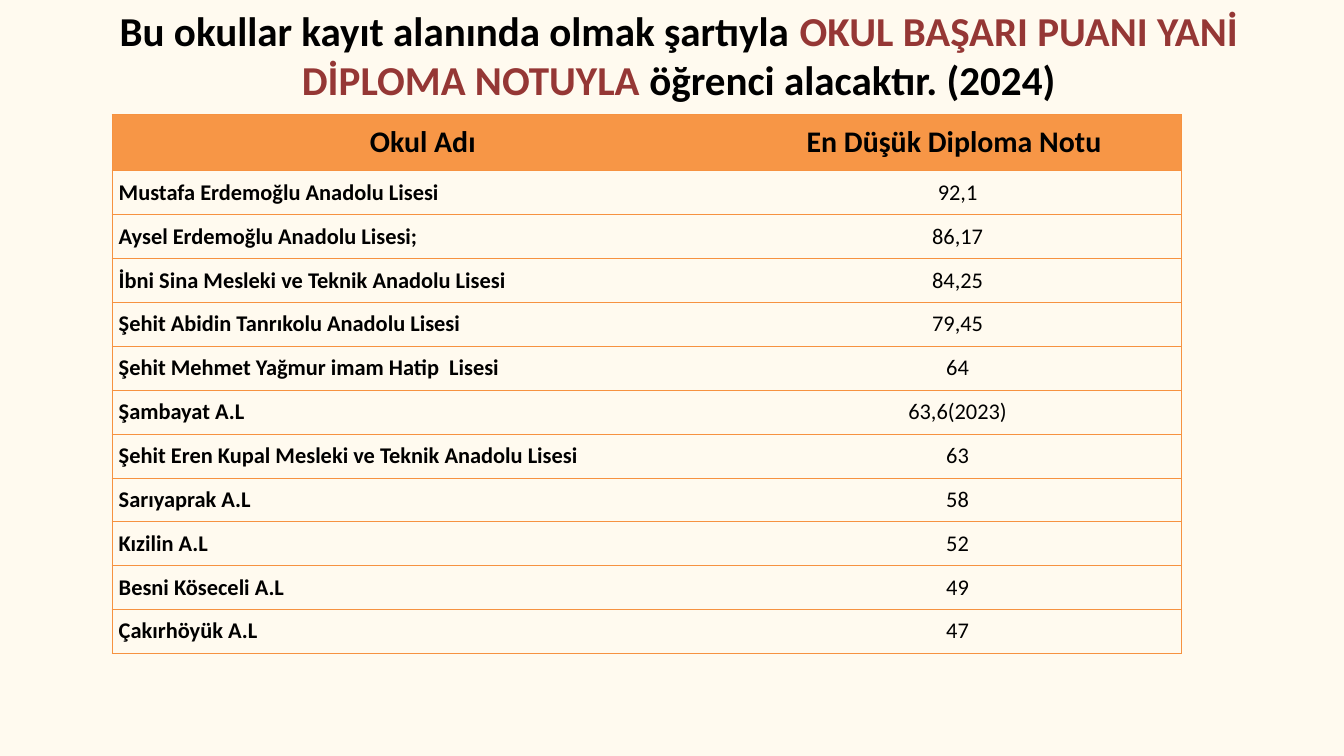
from typing import NamedTuple

from pptx import Presentation
from pptx.dml.color import RGBColor
from pptx.enum.text import MSO_ANCHOR as Anchor, MSO_AUTO_SIZE as AutoSize, PP_ALIGN as Align
from pptx.oxml import parse_xml
from pptx.oxml.ns import nsdecls
from pptx.util import Emu, Pt

PX = 6350  # 144 px to the inch
COLORS = {"page": "FFFAEF", "header": "F79646", "border": "F69240",
          "text": "000000", "accent": "953735"}
TITLE_BOX = {"left": 135, "top": 4, "width": 2640, "height": 228}
COLUMN_WIDTHS = (1332, 960)
HEADER_HEIGHT, ROW_HEIGHT = 120, 94
TABLE_LEFT, TABLE_TOP = 240, 246


class School(NamedTuple):
    name: str
    lowest_grade: str


class Style(NamedTuple):
    size: int
    bold: bool
    align: Align
    color: str = "text"


TITLE_SPANS = (
    ("Bu okullar kayıt alanında olmak şartıyla ", "text"),
    ("OKUL BAŞARI PUANI YANİ DİPLOMA NOTUYLA", "accent"),
    (" öğrenci alacaktır. (2024)", "text"),
)
HEADER = School("Okul Adı", "En Düşük Diploma Notu ")
SCHOOLS = (
    School("Mustafa Erdemoğlu Anadolu Lisesi", "92,1"),
    School("Aysel Erdemoğlu Anadolu Lisesi;", "86,17"),
    School("İbni Sina Mesleki ve Teknik Anadolu Lisesi", "84,25"),
    School("Şehit Abidin Tanrıkolu Anadolu Lisesi", "79,45"),
    School("Şehit Mehmet Yağmur imam Hatip  Lisesi", "64"),
    School("Şambayat A.L", "63,6(2023)"),
    School("Şehit Eren Kupal Mesleki ve Teknik Anadolu Lisesi", "63"),
    School("Sarıyaprak A.L", "58"),
    School("Kızilin A.L", "52"),
    School("Besni Köseceli A.L", "49"),
    School("Çakırhöyük A.L", "47"),
)
HEADER_STYLE = Style(32, True, Align.CENTER)
BODY_STYLES = (Style(24, True, Align.LEFT), Style(24, False, Align.CENTER))


def px(length: int) -> Emu:
    return Emu(length * PX)


def rgb(name: str) -> RGBColor:
    return RGBColor.from_string(COLORS[name])


def add_span(para, text: str, style: Style) -> None:
    span = para.add_run()
    span.text = text
    para.alignment = style.align
    for key, value in {"name": "Calibri", "size": Pt(style.size), "bold": style.bold}.items():
        setattr(span.font, key, value)
    span.font.color.rgb = rgb(style.color)


def set_borders(cell, visible: str) -> None:
    """Draw the sides named in visible and hide the others."""
    properties = cell._tc.get_or_add_tcPr()
    for index, side in enumerate("LRTB"):
        paint = (f'<a:solidFill><a:srgbClr val="{COLORS["border"]}"/></a:solidFill>'
                 if side in visible else "<a:noFill/>")
        properties.insert(index, parse_xml(
            f'<a:ln{side} {nsdecls("a")} w="{Pt(0.75)}">{paint}</a:ln{side}>'))


def fill_row(table, row: int, school: School, styles: tuple, fill: str = "") -> None:
    for column, (text, style) in enumerate(zip(school, styles)):
        cell = table.cell(row, column)
        cell.vertical_anchor = Anchor.MIDDLE
        if fill:
            cell.fill.solid()
            cell.fill.fore_color.rgb = rgb(fill)
        else:
            cell.fill.background()
        set_borders(cell, "LTB" if column == 0 else "RTB")
        add_span(cell.text_frame.paragraphs[0], text, style)


def add_title(page) -> None:
    box = page.shapes.title
    for key, value in TITLE_BOX.items():
        setattr(box, key, px(value))
    frame = box.text_frame
    for key, value in {"word_wrap": True, "auto_size": AutoSize.SHAPE_TO_FIT_TEXT,
                       "vertical_anchor": Anchor.TOP}.items():
        setattr(frame, key, value)
    for text, color in TITLE_SPANS:
        add_span(frame.paragraphs[0], text, Style(44, True, Align.CENTER, color))


def add_school_table(page) -> None:
    heights = [HEADER_HEIGHT] + [ROW_HEIGHT] * len(SCHOOLS)
    table = page.shapes.add_table(
        len(heights), len(COLUMN_WIDTHS), px(TABLE_LEFT), px(TABLE_TOP),
        px(sum(COLUMN_WIDTHS)), px(sum(heights))).table
    table.horz_banding = False
    for column, width in zip(table.columns, COLUMN_WIDTHS):
        column.width = px(width)
    for row, height in zip(table.rows, heights):
        row.height = px(height)
    fill_row(table, 0, HEADER, (HEADER_STYLE, HEADER_STYLE), "header")
    for number, school in enumerate(SCHOOLS, start=1):
        fill_row(table, number, school, BODY_STYLES)


def main() -> None:
    deck = Presentation()
    deck.slide_width, deck.slide_height = px(2880), px(1620)
    page = deck.slides.add_slide(deck.slide_layouts[5])  # title only
    page.background.fill.solid()
    page.background.fill.fore_color.rgb = rgb("page")
    add_school_table(page)
    add_title(page)
    deck.save("out.pptx")


if __name__ == "__main__":
    main()
